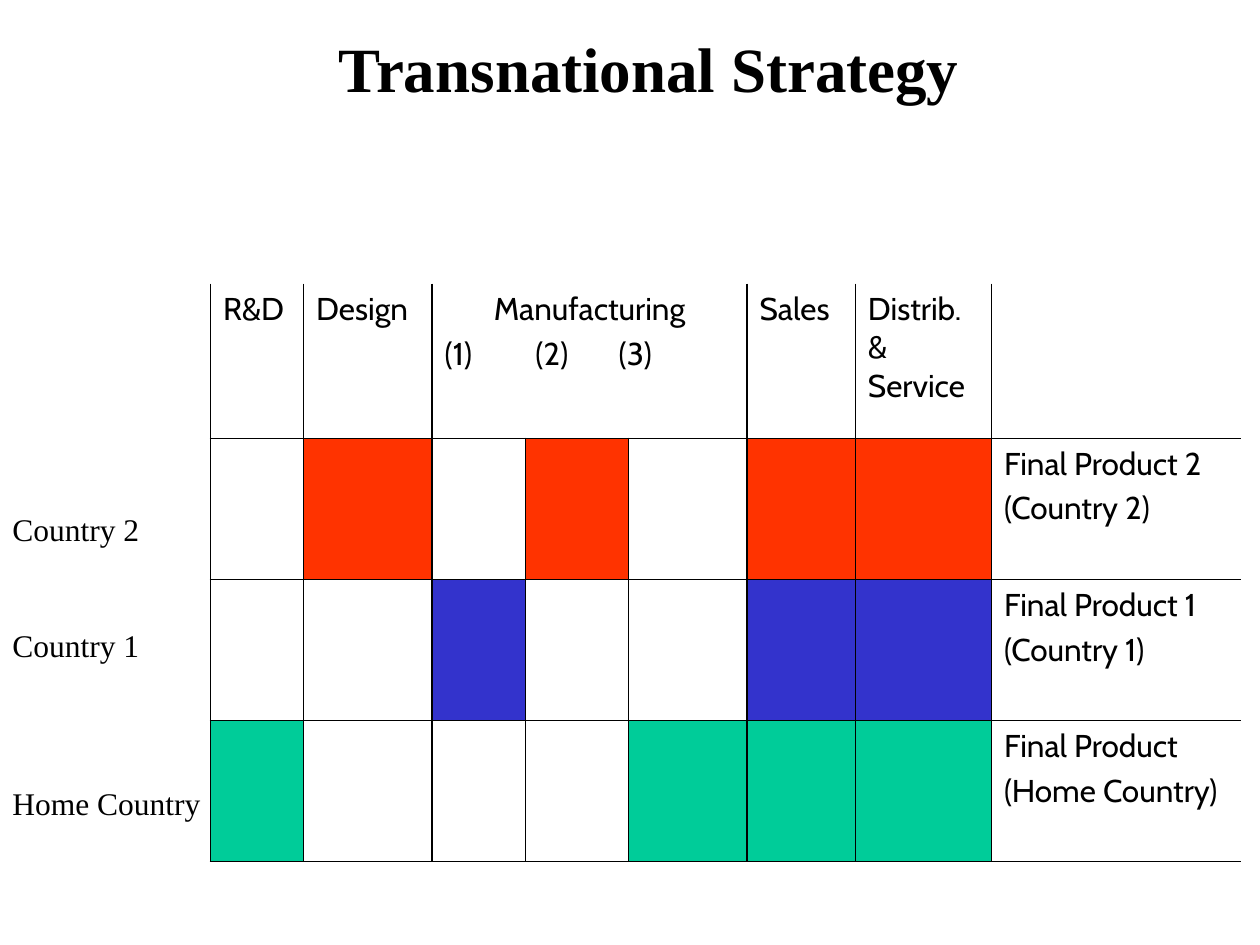
import pptx
import pptx.dml.color
import pptx.enum.text
import pptx.oxml
import pptx.oxml.ns
import pptx.util
from pptx.util import Inches

BLACK = "000000"
RED = "FF3300"
BLUE = "3333CC"
GREEN = "00CC99"


def color(value):
    return pptx.dml.color.RGBColor.from_string(value)


def write(paragraph, text, font, size, bold=False):
    run = paragraph.add_run()
    run.text = text
    run.font.name = font
    run.font.size = pptx.util.Pt(size)
    run.font.bold = bold
    run.font.color.rgb = color(BLACK)


deck = pptx.Presentation()
deck.slide_width = Inches(10)
deck.slide_height = Inches(7.5)
slide = deck.slides.add_slide(deck.slide_layouts[6])

labels = [
    ("Transnational Strategy", 2.59, 0.25, 5.21, 0.65, 36, True),
    ("Home Country", 0, 6.17, 1.75, 0.4, 18, False),
    ("Country 1", 0, 4.92, 1.21, 0.4, 18, False),
    ("Country 2", 0, 4, 1.22, 0.4, 18, False),
]
for text, left, top, width, height, size, bold in labels:
    label = slide.shapes.add_textbox(Inches(left), Inches(top), Inches(width), Inches(height))
    label.text_frame.word_wrap = text in ("Transnational Strategy", "Home Country")
    label.text_frame.vertical_anchor = pptx.enum.text.MSO_ANCHOR.MIDDLE
    if bold:
        label.text_frame.paragraphs[0].line_spacing = 0.9
    write(label.text_frame.paragraphs[0], text, "Times New Roman", size, bold)

column_widths = [0.74, 1.02, 0.74, 0.82, 0.94, 0.86, 1.08, 1.98]
row_heights = [1.23, 1.12, 1.12, 1.12]
activities = {
    0: ["R&D"],
    1: ["Design"],
    2: ["Manufacturing", "(1)\t(2)\t(3)"],
    5: ["Sales"],
    6: ["Distrib. & Service"],
}
products = {
    1: ["Final Product 2", "(Country 2)"],
    2: ["Final Product 1", "(Country 1)"],
    3: ["Final Product", "(Home Country)"],
}
locations = {1: (RED, [1, 3, 5, 6]), 2: (BLUE, [2, 5, 6]), 3: (GREEN, [0, 4, 5, 6])}
last_column = len(column_widths) - 1

matrix = slide.shapes.add_table(
    len(row_heights), len(column_widths), Inches(1.67), Inches(2.25),
    Inches(sum(column_widths)), Inches(sum(row_heights))
).table
matrix.first_row = False
matrix.horz_banding = False
for column, width in zip(matrix.columns, column_widths):
    column.width = Inches(width)
for row, height in zip(matrix.rows, row_heights):
    row.height = Inches(height)
matrix.cell(0, 2).merge(matrix.cell(0, 4))

for r in range(len(row_heights)):
    for c in range(len(column_widths)):
        cell = matrix.cell(r, c)
        fill_color, active_columns = locations.get(r, (None, []))
        if c in active_columns:
            cell.fill.solid()
            cell.fill.fore_color.rgb = color(fill_color)
        else:
            cell.fill.background()

        visible = {"L": True, "R": c < last_column, "T": r > 0, "B": True}
        for position, (side, shown) in enumerate(visible.items()):
            paint = f'<a:solidFill><a:srgbClr val="{BLACK}"/></a:solidFill>' if shown else "<a:noFill/>"
            border = pptx.oxml.parse_xml(
                f'<a:ln{side} {pptx.oxml.ns.nsdecls("a")} w="{pptx.util.Pt(1)}">{paint}</a:ln{side}>'
            )
            cell._tc.get_or_add_tcPr().insert(position, border)

        lines = activities.get(c, []) if r == 0 else products[r] if c == last_column else []
        for index, line in enumerate(lines):
            paragraph = cell.text_frame.paragraphs[0] if index == 0 else cell.text_frame.add_paragraph()
            if index:
                paragraph.space_before = pptx.util.Pt(3.6)
            if line == "Manufacturing":
                paragraph.alignment = pptx.enum.text.PP_ALIGN.CENTER
            if "\t" in line:
                stops = "".join(f'<a:tab pos="{Inches(stop)}" algn="l"/>' for stop in (0.72, 1.38))
                paragraph._p.get_or_add_pPr().append(
                    pptx.oxml.parse_xml(f'<a:tabLst {pptx.oxml.ns.nsdecls("a")}>{stops}</a:tabLst>')
                )
            write(paragraph, line, "Cabin", 18)

deck.save("out.pptx")
